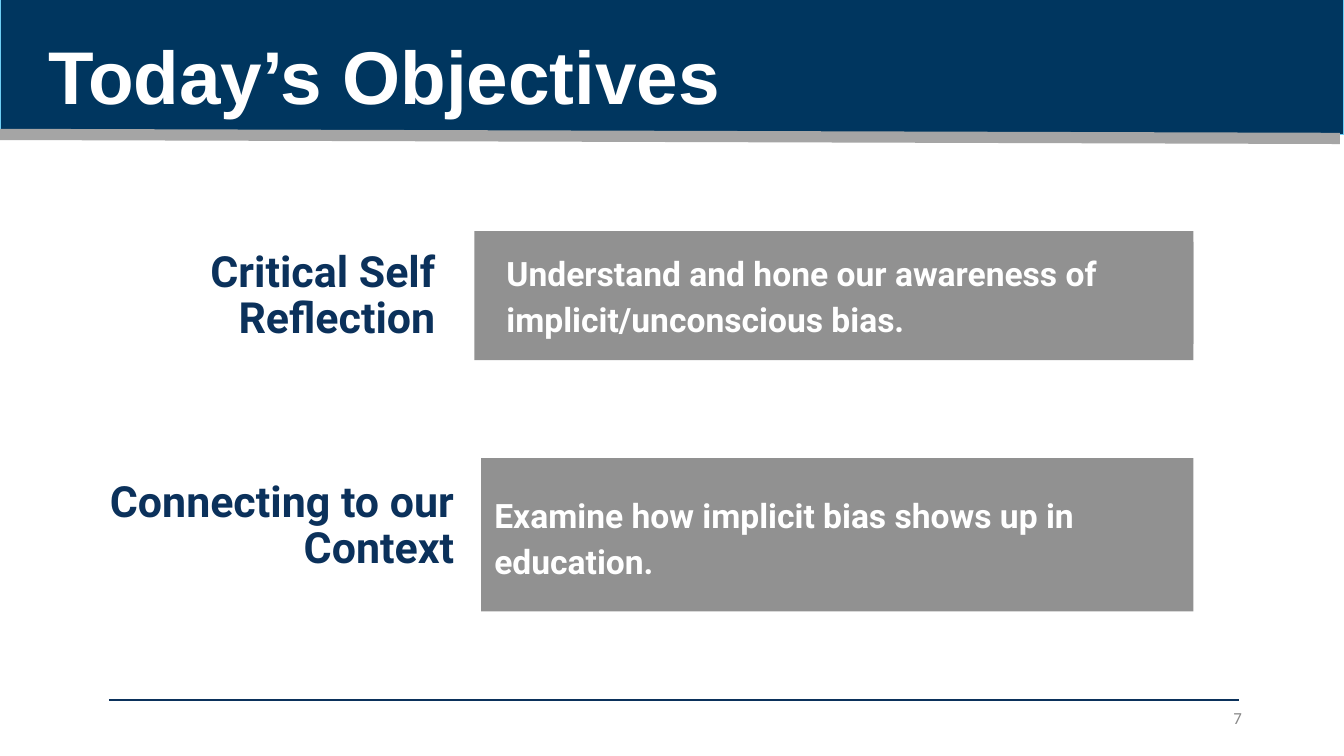
from pptx import Presentation
from pptx.dml.color import RGBColor
from pptx.enum.shapes import MSO_CONNECTOR, MSO_SHAPE
from pptx.enum.text import MSO_ANCHOR, PP_ALIGN
from pptx.oxml.ns import qn
from pptx.util import Inches, Pt
from lxml.etree import SubElement

NAVY, BLUE, GREY, WHITE = "0B315B", "00365F", "919191", "FFFFFF"
OBJECTIVES = [
    ("Critical Self Reflection", (0.6, 1.79, 2.74, 0.83),
     "Understand and hone our awareness of implicit/unconscious bias.",
     (3.53, 1.72, 5.35, 0.96), (3.67, 1.8, 5.21, 0.76)),
    ("Connecting to our Context", (0.06, 3.44, 3.42, 0.96),
     "Examine how implicit bias shows up in education.",
     (3.58, 3.41, 5.3, 1.14), None),
]


def rgb(color):
    """Return the colour for a hex string."""
    return RGBColor.from_string(color)


def add_rect(shapes, box, fill):
    """Add a plain filled rectangle without outline."""
    sp = shapes.add_shape(MSO_SHAPE.RECTANGLE, *map(Inches, box))
    sp.shadow.inherit = False
    sp.fill.solid()
    sp.fill.fore_color.rgb = rgb(fill)
    sp.line.fill.background()
    return sp


def add_line(shapes, start, end, color, width):
    """Add a straight line between two points."""
    line = shapes.add_connector(MSO_CONNECTOR.STRAIGHT, *map(Inches, start + end))
    line.line.color.rgb = rgb(color)
    line.line.width = Pt(width)
    SubElement(line._element.spPr, qn("a:effectLst"))


def set_text(sp, text, size, font, color, bold=True, align=PP_ALIGN.LEFT,
             anchor=MSO_ANCHOR.MIDDLE, spacing=None, insets=(0.1, 0.05)):
    """Write one formatted paragraph into a shape."""
    tf = sp.text_frame
    tf.word_wrap = True
    tf.vertical_anchor = anchor
    tf.margin_left = tf.margin_right = Inches(insets[0])
    tf.margin_top = tf.margin_bottom = Inches(insets[1])
    tf.text = text
    p = tf.paragraphs[0]
    p.alignment = align
    p.line_spacing = spacing
    r = p.runs[0]
    r.font.size = Pt(size)
    r.font.name = font
    r.font.bold = bold
    r.font.color.rgb = rgb(color)


def add_header(s, box):
    """Add the title band with its grey rule."""
    x, y, w, h = box
    band = add_rect(s.shapes, box, BLUE)
    band.line.color.rgb = rgb("6DCFF6")
    band.line.width = Pt(0.75)
    title = s.shapes.add_textbox(*map(Inches, (x + 0.29, y + 0.23, 8.6, 0.96)))
    set_text(title, "Today’s Objectives", 40, "Arial", WHITE,
             anchor=MSO_ANCHOR.TOP, insets=(0.07, 0.04))
    add_line(s.shapes, (x, y + h), (x + w - 0.03, y + h + 0.03), "A5A5A5", 6)


def add_objective(s, label, label_box, text, panel_box, text_box):
    """Add a label on the left and its description panel on the right."""
    shapes = s.shapes.add_group_shape().shapes
    tb = shapes.add_textbox(*map(Inches, label_box))
    set_text(tb, label, 23, "Roboto", NAVY, align=PP_ALIGN.RIGHT, spacing=0.9)
    panel = add_rect(shapes, panel_box, GREY)
    if text_box:
        panel = add_rect(shapes, text_box, GREY)
    set_text(panel, text, 18, "Roboto", WHITE, spacing=1.15)


def add_footer(s, box):
    """Add the footer rule and the slide number."""
    x, y, w, h = box
    add_line(s.shapes, (x, y), (x + w, y), NAVY, 0.75)
    tb = s.shapes.add_textbox(*map(Inches, (x + w - 2.65, y, 2.74, h)))
    set_text(tb, "7", 9, "Calibri", "888888", bold=False,
             align=PP_ALIGN.RIGHT, insets=(0.07, 0.04))


def main():
    """Build and save the slide."""
    prs = Presentation()
    prs.slide_width = Inches(10)
    prs.slide_height = Inches(10 * 9 / 16)
    s = prs.slides.add_slide(prs.slide_layouts[6])
    add_header(s, (0, -0.05, 10, 1.05))
    for objective in OBJECTIVES:
        add_objective(s, *objective)
    add_footer(s, (0.81, 5.21, 8.41, 0.27))
    prs.save("out.pptx")


if __name__ == "__main__":
    main()
